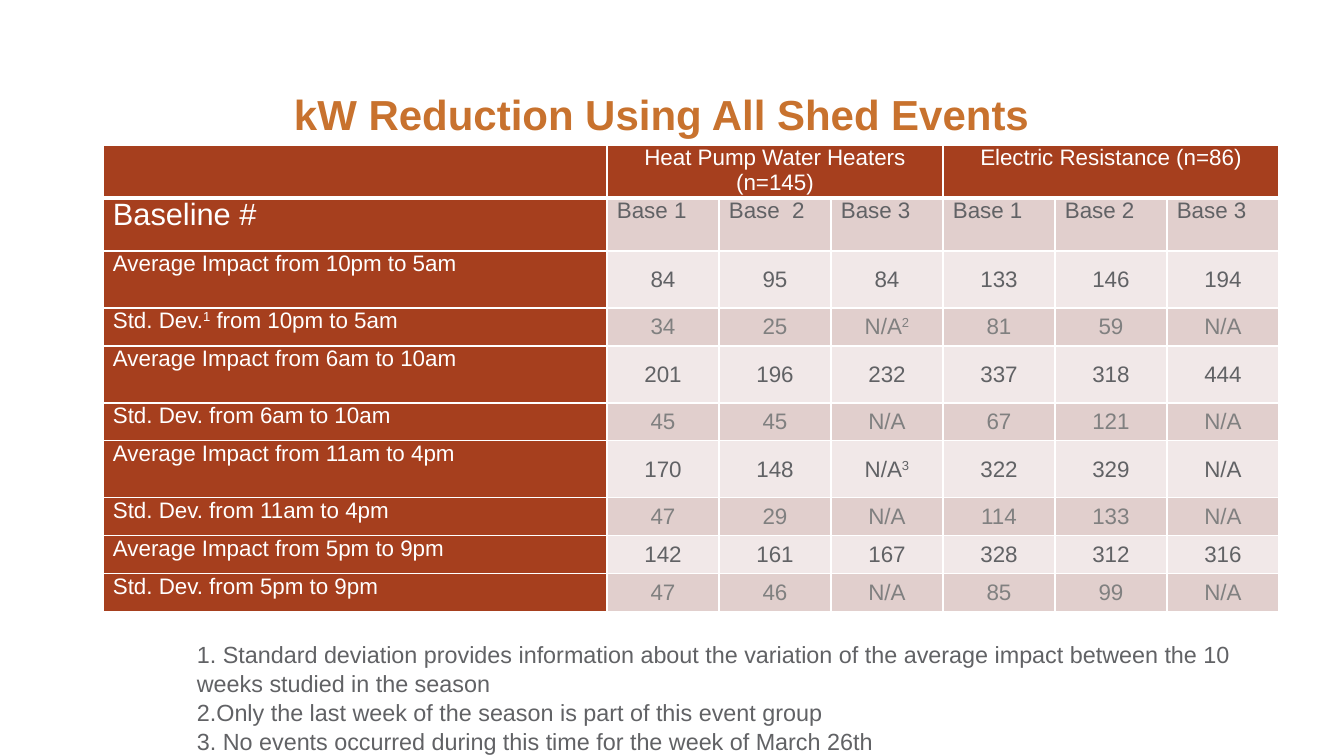
from lxml import etree
from pptx import Presentation
from pptx import util as u
from pptx.dml.color import RGBColor
from pptx.enum import text
from pptx.oxml import ns

PX = 914400 / 100.8
WHITE, RUST, ORANGE = "FFFFFF", "A63F1E", "C8722E"
DARK, GREY = "616265", "808080"
PINK, PALE = "E1CFCD", "F1E8E8"
HEADER = ["", "Heat Pump Water Heaters (n=145)", "", "", "Electric Resistance (n=86)", "", ""]
# Text between carets is superscript.
ROWS = [
    HEADER,
    ["Baseline #", "Base 1", "Base  2", "Base 3", "Base 1", "Base 2", "Base 3"],
    ["Average Impact from 10pm to 5am", "84", "95", "84", "133", "146", "194"],
    ["Std. Dev.^1^ from 10pm to 5am", "34", "25", "N/A^2", "81", "59", "N/A"],
    ["Average Impact from 6am to 10am", "201", "196", "232", "337", "318", "444"],
    ["Std. Dev. from 6am to 10am", "45", "45", "N/A", "67", "121", "N/A"],
    ["Average Impact from 11am to 4pm", "170", "148", "N/A^3", "322", "329", "N/A"],
    ["Std. Dev. from 11am to 4pm", "47", "29", "N/A", "114", "133", "N/A"],
    ["Average Impact from 5pm to 9pm", "142", "161", "167", "328", "312", "316"],
    ["Std. Dev. from 5pm to 9pm", "47", "46", "N/A", "85", "99", "N/A"],
]
HEIGHTS = [53, 53, 57, 38, 57, 38, 57, 38, 38, 38]
WIDTHS = [504] + [112] * 6
NOTES = [
    "1. Standard deviation provides information about the variation of the "
    "average impact between the 10 weeks studied in the season",
    "2.Only the last week of the season is part of this event group",
    "3. No events occurred during this time for the week of March 26th",
]


def px(*lengths):
    """Turn pixel lengths into a list of EMU."""
    return [round(length * PX) for length in lengths]


def style(font, size, color, bold=False):
    font.name, font.size, font.bold = "Arial", u.Pt(size), bold
    font.color.rgb = RGBColor.from_string(color)


deck = Presentation()
deck.slide_width, deck.slide_height = px(1344, 756)
page = deck.slides.add_slide(deck.slide_layouts[5])

title = page.shapes.title
title.left, title.top, title.width, title.height = px(294, 25, 1008, 120)
frame = title.text_frame
frame.text = "kW Reduction Using All Shed Events"
frame.auto_size = text.MSO_AUTO_SIZE.NONE
frame.vertical_anchor = text.MSO_ANCHOR.BOTTOM
frame.margin_left = 0
para = frame.paragraphs[0]
para.alignment = text.PP_ALIGN.LEFT
para.line_spacing = 0.9
style(para.runs[0].font, 30, ORANGE, bold=True)

table = page.shapes.add_table(len(ROWS), len(WIDTHS), *px(103, 145, sum(WIDTHS), sum(HEIGHTS))).table
table.first_row = table.horz_banding = False
for column, width in zip(table.columns, px(*WIDTHS)):
    column.width = width
for row, height in zip(table.rows, px(*HEIGHTS)):
    row.height = height
for first in (1, 4):
    table.cell(0, first).merge(table.cell(0, first + 2))

for r, values in enumerate(ROWS):
    for c, value in enumerate(values):
        cell = table.cell(r, c)
        cell.margin_left, cell.margin_right = px(10, 10)
        cell.margin_top = cell.margin_bottom = 0
        is_label = r == 0 or c == 0
        is_number = r > 1 and c > 0

        properties = cell._tc.get_or_add_tcPr()
        for side in "LRTB":
            thick = (r, side) in ((0, "B"), (1, "T"))
            line = etree.SubElement(properties, ns.qn(f"a:ln{side}"), w=str(u.Pt(3 if thick else 1)))
            fill = etree.SubElement(line, ns.qn("a:solidFill"))
            etree.SubElement(fill, ns.qn("a:srgbClr"), val=WHITE)
        cell.fill.solid()
        shade = RUST if is_label else PINK if r % 2 else PALE
        cell.fill.fore_color.rgb = RGBColor.from_string(shade)

        para = cell.text_frame.paragraphs[0]
        if is_number:
            cell.vertical_anchor = text.MSO_ANCHOR.MIDDLE
        if is_number or r == 0:
            para.alignment = text.PP_ALIGN.CENTER
        color = WHITE if is_label else GREY if is_number and r % 2 else DARK
        if not value:
            continue
        for i, piece in enumerate(value.split("^")):
            span = para.add_run()
            span.text = piece
            style(span.font, 22 if (r, c) == (1, 0) else 16, color)
            if i % 2:
                span._r.get_or_add_rPr().set("baseline", "30000")

notes = page.shapes.add_textbox(*px(187, 634, 1074, 123)).text_frame
notes.word_wrap = True
notes.text = "\n".join(NOTES)
for para in notes.paragraphs:
    para.line_spacing = 1.04
    style(para.runs[0].font, 16.7, DARK)

deck.save("out.pptx")
